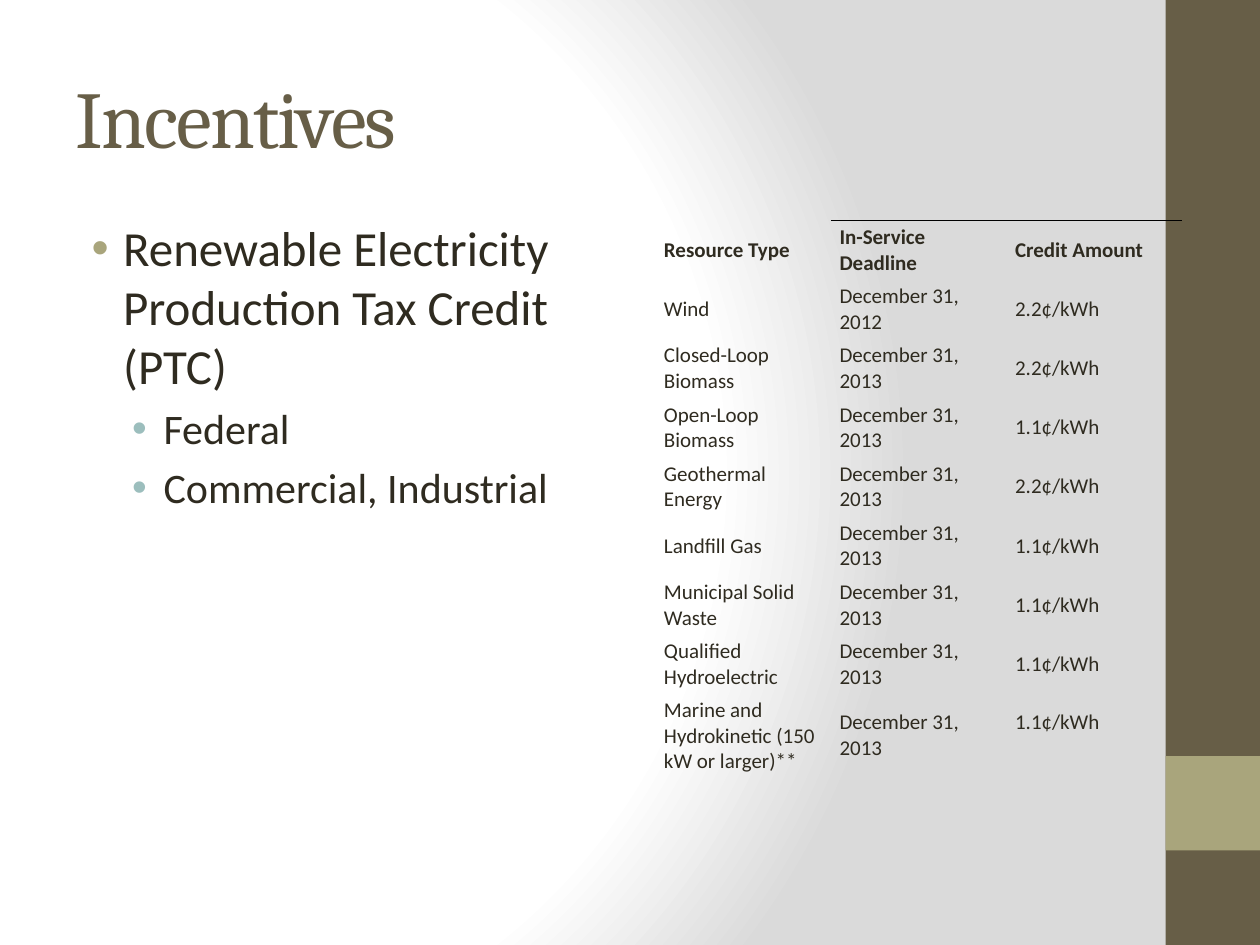
from dataclasses import dataclass

from lxml.etree import SubElement
from pptx import Presentation
from pptx.dml.color import RGBColor
from pptx.enum.shapes import MSO_SHAPE
from pptx.enum.text import MSO_ANCHOR
from pptx.oxml import parse_xml
from pptx.oxml.ns import nsdecls, qn
from pptx.util import Inches, Pt


@dataclass(frozen=True)
class Theme:
    head: str = "Cambria"
    body: str = "Calibri"
    brown: str = "675E47"
    olive: str = "A9A57C"
    teal: str = "9CBEBD"
    ink: str = "2F2B20"
    rule: str = "000000"
    white: str = "FFFFFF"
    grey: str = "DADADA"
    title: int = 46
    main: int = 28
    sub: int = 24
    cell: int = 12


THEME = Theme()
PLAIN = "{2D5ABB26-0587-4C30-8999-92F81FD0307C}"  # no style, no grid
BULLETS = [
    (0, "Renewable Electricity Production Tax Credit (PTC)"),
    (1, "Federal"),
    (1, "Commercial, Industrial"),
]
LATE = "December 31, 2013"
CREDITS = [
    ("Resource Type", "In-Service Deadline", "Credit Amount"),
    ("Wind", "December 31, 2012", "2.2¢/kWh"),
    ("Closed-Loop Biomass", LATE, "2.2¢/kWh"),
    ("Open-Loop Biomass", LATE, "1.1¢/kWh"),
    ("Geothermal Energy", LATE, "2.2¢/kWh"),
    ("Landfill Gas", LATE, "1.1¢/kWh"),
    ("Municipal Solid Waste", LATE, "1.1¢/kWh"),
    ("Qualified Hydroelectric", LATE, "1.1¢/kWh"),
    ("Marine and Hydrokinetic (150 kW or larger)**", LATE, "1.1¢/kWh\v"),
]


def style(para, face, size, color, bold=False):
    for run in para.runs:
        font = run.font
        font.name, font.size, font.bold = face, Pt(size), bold
        font.color.rgb = RGBColor.from_string(color)


def add_back(slide):
    """Radial fade from white at the left to grey."""
    slide.background.fill.gradient()
    old = slide.element.find(".//" + qn("a:gradFill"))
    stops = [(0, THEME.white), (75, THEME.white), (100, THEME.grey)]
    marks = "".join(
        f'<a:gs pos="{pos * 1000}"><a:srgbClr val="{color}"/></a:gs>'
        for pos, color in stops
    )
    new = parse_xml(
        f'<a:gradFill {nsdecls("a")} rotWithShape="1"><a:gsLst>{marks}</a:gsLst>'
        '<a:path path="circle">'
        '<a:fillToRect l="20000" t="50000" r="100000" b="50000"/>'
        "</a:path></a:gradFill>"
    )
    old.getparent().replace(old, new)


def add_bar(slide, left, top, width, height):
    """Side bar with a square accent."""
    parts = [(top, height, THEME.brown), (top + Inches(6), width, THEME.olive)]
    for y, tall, color in parts:
        shape = slide.shapes.add_shape(MSO_SHAPE.RECTANGLE, left, y, width, tall)
        shape.shadow.inherit = False
        shape.fill.solid()
        shape.fill.fore_color.rgb = RGBColor.from_string(color)
        shape.line.fill.background()


def add_title(slide, left, top, width, height):
    frame = slide.shapes.add_textbox(left, top, width, height).text_frame
    frame.word_wrap = True
    frame.vertical_anchor = MSO_ANCHOR.MIDDLE
    frame.text = "Incentives"
    para = frame.paragraphs[0]
    style(para, THEME.head, THEME.title, THEME.brown)
    para.runs[0].font._element.set("spc", "-100")


def add_list(slide, left, top, width, height):
    """Two-level bullet list."""
    frame = slide.shapes.add_textbox(left, top, width, height).text_frame
    frame.word_wrap = True
    frame.text = "\n".join(text for _, text in BULLETS)
    looks = [(0.38, THEME.main, THEME.olive), (0.7, THEME.sub, THEME.teal)]
    for para, (level, _) in zip(frame.paragraphs, BULLETS):
        indent, size, color = looks[level]
        para.level = level
        para.space_before = Pt(size * 0.2)
        style(para, THEME.body, size, THEME.ink)
        props = para._p.get_or_add_pPr()
        props.set("marL", str(Inches(indent)))
        props.set("indent", str(Inches(-0.25)))
        tint = SubElement(props, qn("a:buClr"))
        SubElement(tint, qn("a:srgbClr"), val=color)
        SubElement(props, qn("a:buFont"), typeface="Arial")
        SubElement(props, qn("a:buChar"), char="•")


def add_rule(cell):
    """Thin line along the top of a cell."""
    line = parse_xml(
        f'<a:lnT {nsdecls("a")} w="12700"><a:solidFill>'
        f'<a:srgbClr val="{THEME.rule}"/></a:solidFill></a:lnT>'
    )
    cell._tc.get_or_add_tcPr().insert(0, line)


def add_grid(slide, left, top, width, height):
    """Credit table; the last row takes what height is left."""
    rows, cols = len(CREDITS), len(CREDITS[0])
    frame = slide.shapes.add_table(rows, cols, left, top, width, height)
    table = frame.table
    table._tbl.tblPr.find(qn("a:tableStyleId")).text = PLAIN
    table.horz_banding = False
    step = Inches(0.47)
    for row in table.rows:
        row.height = step
    table.rows[rows - 1].height = height - step * (rows - 1)
    for y, texts in enumerate(CREDITS):
        for x, text in enumerate(texts):
            cell = table.cell(y, x)
            cell.text_frame.text = text
            cell.vertical_anchor = MSO_ANCHOR.MIDDLE
            cell.margin_left = cell.margin_right = Inches(0.07)
            cell.margin_top = cell.margin_bottom = Inches(0.03)
            cell.fill.background()
            para = cell.text_frame.paragraphs[0]
            style(para, THEME.body, THEME.cell, THEME.ink, y == 0)
            for gap in para._p.findall(qn("a:br")):
                SubElement(gap, qn("a:rPr"), sz=str(THEME.cell * 100))
            if y == 0 and x > 0:
                add_rule(cell)


def main():
    deck = Presentation()
    deck.slide_width, deck.slide_height = Inches(10), Inches(7.5)
    slide = deck.slides.add_slide(deck.slide_layouts[6])
    add_back(slide)
    add_bar(slide, Inches(9.25), Inches(0), Inches(0.75), Inches(7.5))
    add_title(slide, Inches(0.5), Inches(0.3), Inches(8.33), Inches(1.25))
    add_list(slide, Inches(0.5), Inches(1.68), Inches(4), Inches(5.02))
    add_grid(slide, Inches(5.2), Inches(1.75), Inches(4.18), Inches(4.41))
    deck.save("out.pptx")


if __name__ == "__main__":
    main()
